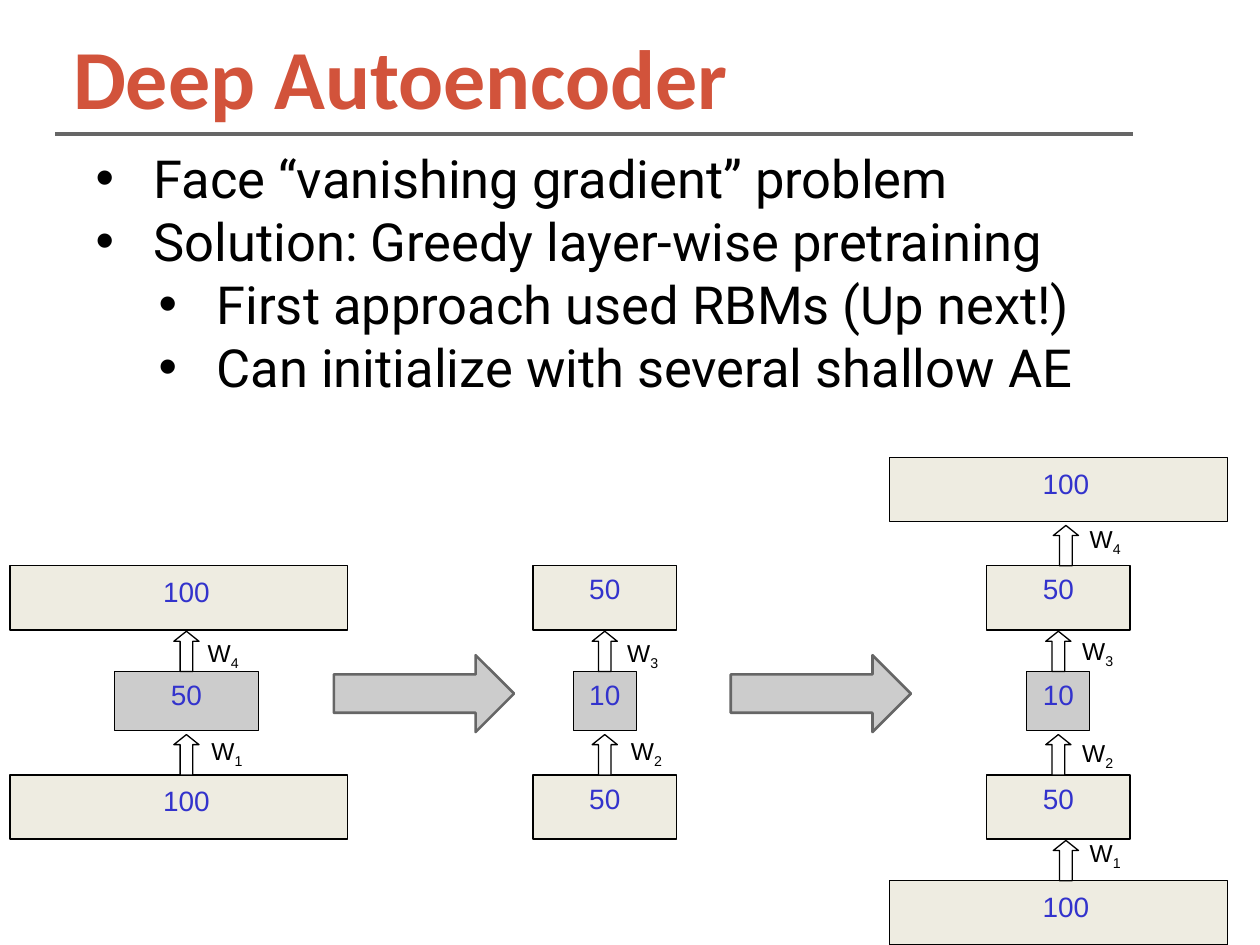
import pptx
import pptx.dml.color
import pptx.enum.shapes
import pptx.enum.text
import pptx.oxml
import pptx.oxml.ns
import pptx.util
from dataclasses import dataclass

# Content
TITLE = "Deep Autoencoder"
POINTS = [  # level, text
    (0, "Face “vanishing gradient” problem"),
    (0, "Solution: Greedy layer-wise pretraining"),
    (1, "First approach used RBMs (Up next!)"),
    (1, "Can initialize with several shallow AE"),
]
# Layers: row, units, is the code layer.
# Weights: row the arrow leaves from, subscript, offset of the label
# from the arrow's axis and top.
NETWORKS = [
    dict(axis=1.48,
         layers=[(1, 100, False), (2, 50, True), (3, 100, False)],
         weights=[(2, "4", 0.07, -0.05), (3, "1", 0.10, -0.09)]),
    dict(axis=4.80,
         layers=[(1, 50, False), (2, 10, True), (3, 50, False)],
         weights=[(2, "3", 0.08, -0.05), (3, "2", 0.11, -0.09)]),
    dict(axis=8.40,
         layers=[(0, 100, False), (1, 50, False), (2, 10, True),
                 (3, 50, False), (4, 100, False)],
         weights=[(1, "4", 0.09, -0.11), (2, "3", 0.09, -0.06),
                  (3, "2", 0.09, -0.07), (4, "1", 0.09, -0.12)]),
]
STEP_LEFTS = (2.65, 5.80)


@dataclass(frozen=True)
class Theme:
    title: str = "D2533B"
    ink: str = "000000"
    units: str = "3333CC"
    layer: str = "EEECE1"
    code: str = "CCCCCC"
    rule: str = "666666"
    paper: str = "FFFFFF"
    title_size: int = 48
    point_size: int = 30
    units_size: int = 16
    weight_size: int = 14


THEME = Theme()

# Grid
ROW_TOPS = (3.63, 4.49, 5.33, 6.15, 6.99)
LAYER_WIDTH = {100: 2.68, 50: 1.14, 10: 0.50}
LABEL_WIDTH = {100: 1.97, 50: 0.83, 10: 0.83}
LAYER_HEIGHT, CODE_HEIGHT, LABEL_HEIGHT = 0.51, 0.47, 0.49
ARROW_WIDTH, ARROW_HEIGHT = 0.20, 0.32
OUTER_SHIFT = 0.06  # the last network's outer layers sit right of its axis

SHAPE = pptx.enum.shapes.MSO_SHAPE
ALIGN = pptx.enum.text.PP_ALIGN

deck = pptx.Presentation()
deck.slide_width = pptx.util.Inches(10)
deck.slide_height = pptx.util.Inches(7.5)
slide = deck.slides.add_slide(deck.slide_layouts[5])


def inches(*lengths):
    return [pptx.util.Inches(length) for length in lengths]


def rgb(color):
    return pptx.dml.color.RGBColor.from_string(color)


def add_run(paragraph, text, size, font, color, bold=False, subscript=False):
    run = paragraph.add_run()
    run.text = text
    run.font.size = pptx.util.Pt(size)
    run.font.name = font
    run.font.bold = bold
    run.font.color.rgb = rgb(color)
    if subscript:
        run._r.get_or_add_rPr().set("baseline", "-25000")


def set_bullet(paragraph, level):
    paragraph.level = level
    properties = paragraph._p.get_or_add_pPr()
    properties.set("marL", str(pptx.util.Inches(0.5 * (level + 1))))
    properties.set("indent", str(pptx.util.Inches(-0.46)))
    namespace = pptx.oxml.ns.nsdecls("a")
    for xml in (f'<a:buClr {namespace}><a:srgbClr val="{THEME.ink}"/></a:buClr>',
                f'<a:buFont {namespace} typeface="Arial"/>',
                f'<a:buChar {namespace} char="•"/>'):
        properties.append(pptx.oxml.parse_xml(xml))


def write(place, text, holder=None, align=ALIGN.LEFT, inset=0.1, levels=None,
          subscript=None, **style):
    """Put text, one paragraph a line, in a new text box or in a placeholder."""
    holder = holder or slide.shapes.add_textbox(0, 0, 0, 0)
    holder.left, holder.top, holder.width, holder.height = inches(*place)
    frame = holder.text_frame
    frame.word_wrap = True
    frame.auto_size = pptx.enum.text.MSO_AUTO_SIZE.NONE
    frame.vertical_anchor = pptx.enum.text.MSO_ANCHOR.TOP
    frame.margin_left, frame.margin_right = inches(0.1, 0.1)
    frame.margin_top, frame.margin_bottom = inches(inset, inset)
    for index, line in enumerate(text.split("\n")):
        paragraph = frame.add_paragraph() if index else frame.paragraphs[0]
        paragraph.alignment = align
        if levels:
            set_bullet(paragraph, levels[index])
        add_run(paragraph, line, **style)
        if subscript:
            add_run(paragraph, subscript, subscript=True, **style)


def draw(kind, place, fill, line=THEME.ink, line_width=0.75, adjustments=()):
    shape = slide.shapes.add_shape(kind, *inches(*place))
    shape.shadow.inherit = False
    shape.fill.solid()
    shape.fill.fore_color.rgb = rgb(fill)
    shape.line.color.rgb = rgb(line)
    shape.line.width = pptx.util.Pt(line_width)
    for index, value in enumerate(adjustments):
        shape.adjustments[index] = value


def draw_layer(axis, row, units, is_code):
    outer = units == 100
    center = axis - OUTER_SHIFT if outer else axis
    width, top = LAYER_WIDTH[units], ROW_TOPS[row]
    draw(SHAPE.RECTANGLE,
         (center - width / 2, top, width,
          CODE_HEIGHT if is_code else LAYER_HEIGHT),
         THEME.code if is_code else THEME.layer)
    label_width = LABEL_WIDTH[units]
    label_top = top + 0.02 if outer else top
    write((axis - label_width / 2, label_top, label_width, LABEL_HEIGHT),
          str(units), align=ALIGN.CENTER, inset=0.05,
          size=THEME.units_size, font="Arial", color=THEME.units)


def draw_weight(axis, row, subscript, dx, dy):
    top = ROW_TOPS[row] - ARROW_HEIGHT
    draw(SHAPE.UP_ARROW,
         (axis - ARROW_WIDTH / 2, top, ARROW_WIDTH, ARROW_HEIGHT),
         THEME.paper, adjustments=(0.5, 0.4))
    write((axis + dx, top + dy, 0.5, 0.41), "W", subscript=subscript,
          size=THEME.weight_size, font="Arial", color=THEME.ink)


# Title and rule
write((0.48, 0.1, 8.56, 0.96), TITLE, holder=slide.shapes.title,
      size=THEME.title_size, font="Calibri", color=THEME.title, bold=True)
title_rule = slide.shapes.add_connector(
    pptx.enum.shapes.MSO_CONNECTOR.STRAIGHT, *inches(0.44, 1.06, 8.99, 1.06))
title_rule.line.color.rgb = rgb(THEME.rule)
title_rule.line.width = pptx.util.Pt(2.25)
title_rule._element.spPr.append(pptx.oxml.parse_xml(
    f'<a:effectLst {pptx.oxml.ns.nsdecls("a")}/>'))

# Bullet points
write((0.62, 1.06, 8.82, 2.78), "\n".join(text for _, text in POINTS),
      levels=[level for level, _ in POINTS],
      size=THEME.point_size, font="Roboto", color=THEME.ink)

# Networks, each a stack of layers joined by weights
for network in NETWORKS:
    for row, units, is_code in network["layers"]:
        shift = OUTER_SHIFT if row in (0, 4) else 0
        draw_layer(network["axis"] + shift, row, units, is_code)
    for row, *label in network["weights"]:
        shift = OUTER_SHIFT if row in (1, 4) else 0
        draw_weight(network["axis"] + shift, row, *label)

# Steps between the networks
for left in STEP_LEFTS:
    draw(SHAPE.RIGHT_ARROW, (left, 5.2, 1.43, 0.61), THEME.code,
         line=THEME.rule, line_width=1.5)

deck.save("out.pptx")
